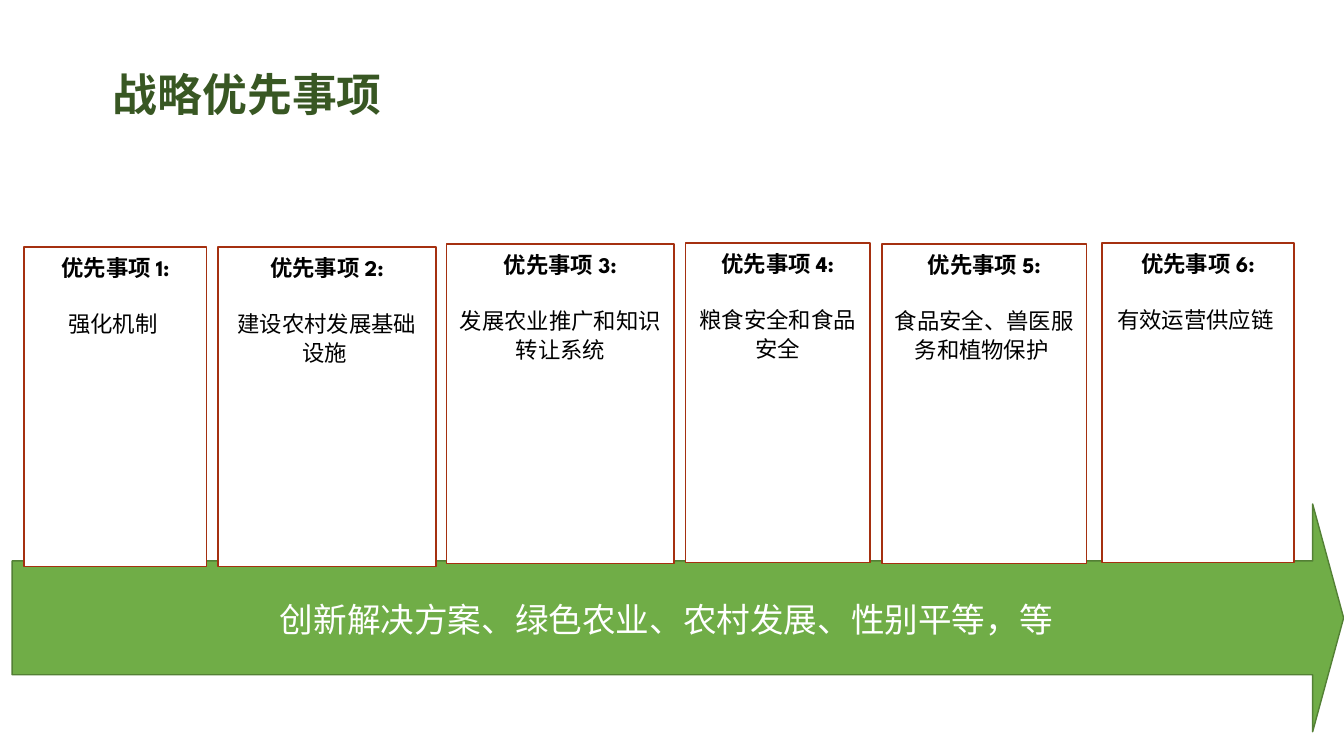
from dataclasses import dataclass

from pptx import Presentation
from pptx.dml.color import RGBColor
from pptx.enum.shapes import MSO_SHAPE
from pptx.enum.text import MSO_ANCHOR, MSO_AUTO_SIZE, PP_ALIGN
from pptx.util import Pt

RECTANGLE, RIGHT_ARROW = MSO_SHAPE.RECTANGLE, MSO_SHAPE.RIGHT_ARROW
LEFT, CENTER = PP_ALIGN.LEFT, PP_ALIGN.CENTER
TOP, MIDDLE = MSO_ANCHOR.TOP, MSO_ANCHOR.MIDDLE
NO_AUTOFIT = MSO_AUTO_SIZE.NONE

TITLE_ONLY = 5
BODY_FONT = "League Spartan"
CARD_HEIGHT = 228.24


@dataclass
class Priority:
    left: float
    top: float
    width: float
    text: str


PRIORITIES = [
    Priority(17.28, 176.4, 130.32, "强化机制 "),
    Priority(155.52, 176.4, 156.24, "建设农村发展基础设施 "),
    Priority(318.96, 174.24, 162.72, "发展农业推广和知识转让系统"),
    Priority(489.6, 173.52, 131.76, "粮食安全和食品安全"),
    Priority(630, 174.24, 146.16, "食品安全、兽医服务和植物保护 "),
    Priority(786.96, 173.52, 137.52, "有效运营供应链 "),
]


def color(value: str) -> RGBColor:
    return RGBColor.from_string(value)


def write(para, text: str, *, size: float, font: str = BODY_FONT,
          ink: str = "000000", bold: bool = False, align=CENTER,
          spacing: float = 1.07, after: float = 0) -> None:
    para.alignment = align
    para.line_spacing = spacing
    para.space_before = Pt(0)
    para.space_after = Pt(after)
    span = para.add_run()
    span.text = text
    span.font.name = font
    span.font.size = Pt(size)
    span.font.bold = bold
    span.font.color.rgb = color(ink)


def add_box(page, kind, left: float, top: float, width: float, height: float,
            *, fill: str, line: str, weight: float, anchor):
    box = page.shapes.add_shape(kind, Pt(left), Pt(top), Pt(width), Pt(height))
    box.shadow.inherit = False
    box.fill.solid()
    box.fill.fore_color.rgb = color(fill)
    box.line.color.rgb = color(line)
    box.line.width = Pt(weight)
    box.text_frame.word_wrap = True
    box.text_frame.vertical_anchor = anchor
    return box


def add_title(page, text: str) -> None:
    title = page.shapes.title
    title.left, title.top = Pt(73.44), Pt(32.4)
    title.width, title.height = Pt(731.52), Pt(73.44)
    frame = title.text_frame
    frame.auto_size = NO_AUTOFIT
    frame.vertical_anchor = MIDDLE
    write(frame.paragraphs[0], text, size=32, font="Calibri", ink="385723",
          bold=True, align=LEFT, spacing=0.9)


def add_arrow(page, text: str) -> None:
    arrow = add_box(page, RIGHT_ARROW, 8.64, 360, 951.12, 162.72,
                    fill="70AD47", line="538035", weight=1, anchor=MIDDLE)
    arrow.adjustments[0] = 0.5
    arrow.adjustments[1] = 0.136
    write(arrow.text_frame.paragraphs[0], text, size=24, ink="FFFFFF")


def add_card(page, number: int, priority: Priority) -> None:
    card = add_box(page, RECTANGLE, priority.left, priority.top,
                   priority.width, CARD_HEIGHT,
                   fill="FFFFFF", line="A53010", weight=1.25, anchor=TOP)
    frame = card.text_frame
    write(frame.paragraphs[0], f"优先事项 {number}:", size=16, bold=True, after=20)
    write(frame.add_paragraph(), priority.text, size=16)


def main() -> None:
    deck = Presentation()
    deck.slide_width, deck.slide_height = Pt(960), Pt(540)
    page = deck.slides.add_slide(deck.slide_layouts[TITLE_ONLY])

    # Title and the arrow behind the cards
    add_title(page, "战略优先事项")
    add_arrow(page, "创新解决方案、绿色农业、农村发展、性别平等，等 ")

    # Numbered priority cards
    for number, priority in enumerate(PRIORITIES, start=1):
        add_card(page, number, priority)

    deck.save("out.pptx")


if __name__ == "__main__":
    main()
